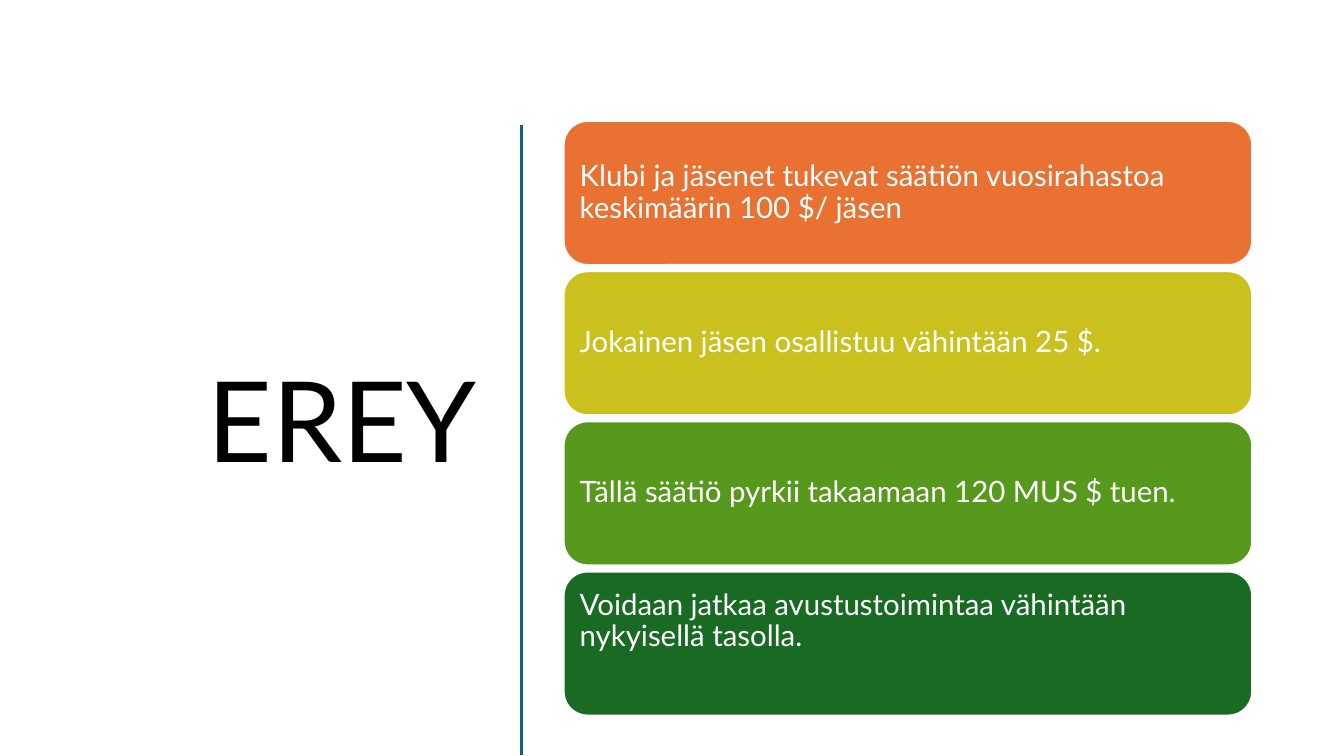
from dataclasses import dataclass

from lxml.etree import SubElement
from pptx import Presentation
from pptx.dml.color import RGBColor
from pptx.enum.shapes import MSO_CONNECTOR, MSO_SHAPE
from pptx.enum.text import MSO_ANCHOR, PP_ALIGN
from pptx.oxml.ns import qn
from pptx.slide import Slide
from pptx.text.text import TextFrame
from pptx.util import Emu, Pt

EMU_PER_PX = 9144  # 100 px to the inch
FONT = "Lato"
COLORS = {
    "black": "000000",
    "white": "FFFFFF",
    "blue": "156082",
    "orange": "E97132",
    "yellow": "CBC11E",
    "green": "56991D",
    "dark_green": "196B24",
}
CARD_LEFT, CARD_TOP, CARD_WIDTH, CARD_HEIGHT = 559, 120, 683, 143
CARD_GAP = 6
CARD_INSET = 16


@dataclass(frozen=True)
class Card:
    text: str
    color: str
    extra_bottom: int = 0


CARDS = [
    Card("Klubi ja jäsenet tukevat säätiön vuosirahastoa keskimäärin 100 $/ jäsen", "orange"),
    Card("Jokainen jäsen osallistuu vähintään 25 $.", "yellow"),
    Card("Tällä säätiö pyrkii takaamaan 120 MUS $ tuen.", "green"),
    Card("Voidaan jatkaa avustustoimintaa vähintään nykyisellä tasolla.", "dark_green", 44),
]


def px(length: int) -> Emu:
    return Emu(length * EMU_PER_PX)


def color(name: str) -> RGBColor:
    return RGBColor.from_string(COLORS[name])


def write_text(text_frame: TextFrame, text: str, size: int, color_name: str,
               alignment: PP_ALIGN) -> None:
    text_frame.text = text
    text_frame.word_wrap = True
    text_frame.vertical_anchor = MSO_ANCHOR.MIDDLE
    paragraph = text_frame.paragraphs[0]
    paragraph.alignment = alignment
    paragraph.line_spacing = 0.9
    font = paragraph.runs[0].font
    font.name = FONT
    font.size = Pt(size)
    font.color.rgb = color(color_name)


def add_title(slide: Slide, text: str) -> None:
    box = slide.shapes.add_textbox(px(52), px(117), px(431), px(611))
    write_text(box.text_frame, text, 80, "black", PP_ALIGN.RIGHT)


def add_divider(slide: Slide) -> None:
    line = slide.shapes.add_connector(
        MSO_CONNECTOR.STRAIGHT, px(517), px(124), px(517), px(749))
    line.line.color.rgb = color("blue")
    line.line.width = Pt(2)
    SubElement(line._element.spPr, qn("a:effectLst"))


def add_card(slide: Slide, card: Card, top: int) -> None:
    shape = slide.shapes.add_shape(
        MSO_SHAPE.ROUNDED_RECTANGLE,
        px(CARD_LEFT), px(top), px(CARD_WIDTH), px(CARD_HEIGHT))
    shape.shadow.inherit = False
    shape.fill.solid()
    shape.fill.fore_color.rgb = color(card.color)
    shape.line.color.rgb = color("white")
    shape.line.width = Pt(1.5)
    text_frame = shape.text_frame
    # The rounded corners already inset the text by 0.29 of the radius
    corner_inset = round(CARD_HEIGHT * shape.adjustments[0] * 0.29)
    side_inset = px(CARD_INSET - corner_inset)
    text_frame.margin_left = text_frame.margin_right = text_frame.margin_top = side_inset
    text_frame.margin_bottom = side_inset + px(card.extra_bottom)
    write_text(text_frame, card.text, 21, "white", PP_ALIGN.LEFT)


def main() -> None:
    presentation = Presentation()
    presentation.slide_width, presentation.slide_height = px(1333), px(750)
    slide = presentation.slides.add_slide(presentation.slide_layouts[6])

    # Title and divider on the left
    add_title(slide, "EREY")
    add_divider(slide)

    # Stack of cards on the right
    for index, card in enumerate(CARDS):
        add_card(slide, card, CARD_TOP + index * (CARD_HEIGHT + CARD_GAP))

    presentation.save("out.pptx")


if __name__ == "__main__":
    main()
